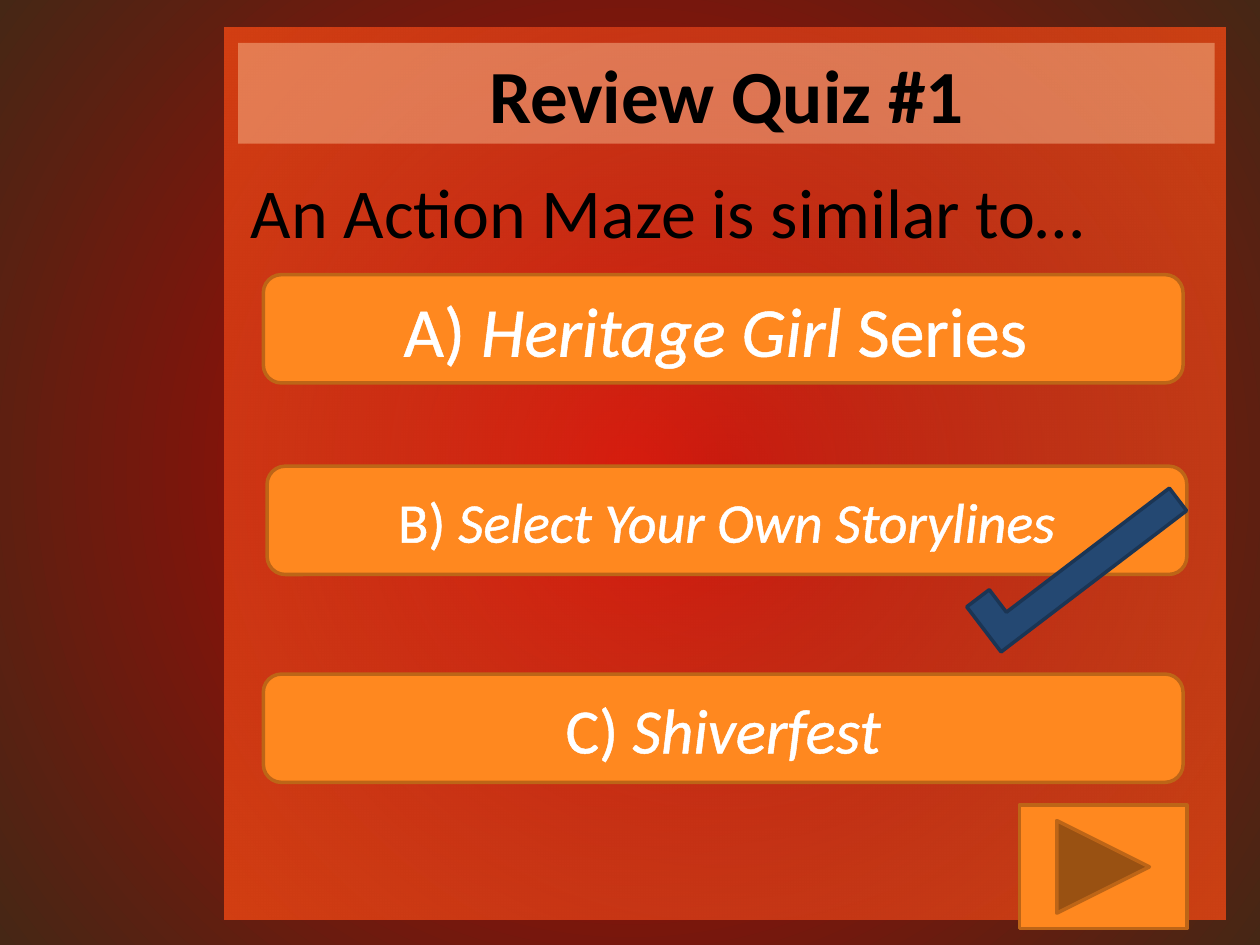
import pptx
import pptx.util
import pptx.dml.color
import pptx.enum.shapes
import pptx.enum.text
import pptx.oxml
import pptx.oxml.ns

Inches = pptx.util.Inches
Pt = pptx.util.Pt
qn = pptx.oxml.ns.qn
SHAPES = pptx.enum.shapes.MSO_SHAPE
ALIGN = pptx.enum.text.PP_ALIGN
ORANGE, BROWN = "FF881F", "BD6517"
NAVY, DARK_NAVY = "244872", "1B3554"
BLACK, WHITE = "000000", "FFFFFF"


def color(hex_value):
    return pptx.dml.color.RGBColor.from_string(hex_value)


def set_radial(owner, fill, stops):
    fill.solid()
    fill.fore_color.rgb = color(BLACK)
    solid = next(owner.iter(qn("a:solidFill")))
    stop_xml = "".join(
        f'<a:gs pos="{position * 1000}"><a:srgbClr val="{hex_value}">'
        f'<a:alpha val="{opacity * 1000}"/></a:srgbClr></a:gs>'
        for position, hex_value, opacity in stops
    )
    gradient = pptx.oxml.parse_xml(
        f'<a:gradFill {pptx.oxml.ns.nsdecls("a")} rotWithShape="1">'
        f"<a:gsLst>{stop_xml}</a:gsLst>"
        '<a:path path="circle"><a:fillToRect l="50000" t="50000" r="50000" b="50000"/>'
        "</a:path></a:gradFill>"
    )
    solid.getparent().replace(solid, gradient)


def add_block(slide, preset, box, fill, line=None):
    block = slide.shapes.add_shape(preset, *map(Inches, box))
    block.shadow.inherit = False
    block.fill.solid()
    block.fill.fore_color.rgb = color(fill)
    if line:
        block.line.color.rgb = color(line)
        block.line.width = Pt(2)
    else:
        block.line.fill.background()
    return block


def set_opacity(block, percent):
    tint = next(block._element.spPr.iter(qn("a:srgbClr")))
    tint.append(pptx.oxml.parse_xml(
        f'<a:alpha {pptx.oxml.ns.nsdecls("a")} val="{percent * 1000}"/>'))


def write(block, parts, size, hex_value, align, bold=False):
    frame = block.text_frame
    frame.word_wrap = True
    paragraph = frame.paragraphs[0]
    paragraph.alignment = align
    paragraph.font.name = "Calibri"
    paragraph.font.size = Pt(size)
    paragraph.font.color.rgb = color(hex_value)
    paragraph.font.bold = bold
    for text, italic in parts:
        run = paragraph.add_run()
        run.text = text
        if italic:
            run.font.italic = True
    return paragraph


def outline_text(paragraph, hex_value, width):
    for run in paragraph.runs:
        run.font._element.insert(0, pptx.oxml.parse_xml(
            f'<a:ln {pptx.oxml.ns.nsdecls("a")} w="{Pt(width)}"><a:solidFill>'
            f'<a:srgbClr val="{hex_value}"/></a:solidFill></a:ln>'))


def add_answer(slide, left, top, parts, size):
    answer = add_block(slide, SHAPES.ROUNDED_RECTANGLE, (left, top, 7.3, 0.86), ORANGE, BROWN)
    answer.text_frame.vertical_anchor = pptx.enum.text.MSO_ANCHOR.MIDDLE
    outline_text(write(answer, parts, size, WHITE, ALIGN.CENTER), WHITE, 1.45)


def main():
    deck = pptx.Presentation()
    deck.slide_width, deck.slide_height = Inches(10), Inches(7.5)
    slide = deck.slides.add_slide(deck.slide_layouts[6])
    set_radial(slide._element, slide.background.fill,
               [(0, "C00000", 100), (100, "462715", 100)])

    panel = add_block(slide, SHAPES.RECTANGLE, (1.78, 0.22, 7.95, 7.08), ORANGE)
    set_radial(panel._element.spPr, panel.fill, [(0, "FF512C", 30), (100, "FF4C14", 72)])

    title = add_block(slide, SHAPES.RECTANGLE, (1.89, 0.34, 7.75, 0.8), "FFCFA5")
    set_opacity(title, 43)
    title.text_frame.vertical_anchor = pptx.enum.text.MSO_ANCHOR.MIDDLE
    write(title, [("Review Quiz #1", False)], 42.9, BLACK, ALIGN.CENTER, bold=True)

    question = slide.shapes.add_textbox(*map(Inches, (1.89, 1.29, 7.18, 0.77)))
    write(question, [("An Action Maze is similar to…", False)], 40, BLACK, ALIGN.LEFT)
    question.text_frame.auto_size = pptx.enum.text.MSO_AUTO_SIZE.SHAPE_TO_FIT_TEXT

    answers = [
        (2.09, 2.18, [("A) ", False), ("Heritage Girl ", True), ("Series ", False)], 40),
        (2.12, 3.7, [("B) ", False), ("Select Your Own Storylines", True)], 32),
        (2.09, 5.35, [("C) ", False), ("Shiverfest", True)], 36),
    ]
    for left, top, parts, size in answers:
        add_answer(slide, left, top, parts, size)

    check_mark = add_block(slide, SHAPES.CORNER, (7.62, 4.21, 1.85, 0.45), NAVY, DARK_NAVY)
    check_mark.rotation = 322.7
    add_block(slide, SHAPES.ACTION_BUTTON_FORWARD_OR_NEXT, (8.09, 6.39, 1.33, 0.98),
              ORANGE, BROWN)
    deck.save("out.pptx")


if __name__ == "__main__":
    main()
